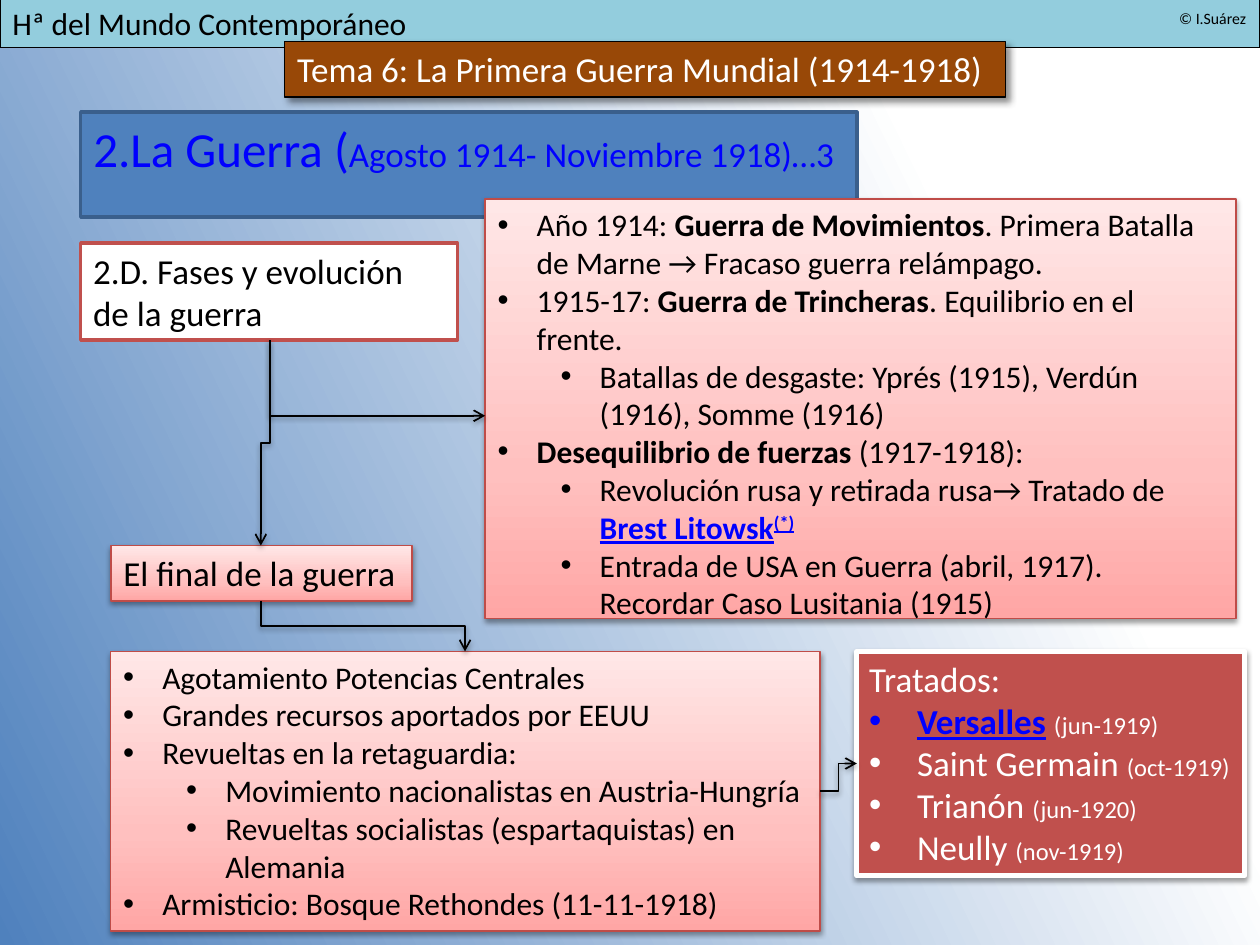
from lxml import etree
from pptx import Presentation
from pptx import util as u
from pptx.dml.color import RGBColor
from pptx.enum import shapes, text
from pptx.oxml import parse_xml
from pptx.oxml.ns import nsdecls, qn

BLACK, WHITE, BLUE, RED = "000000", "FFFFFF", "0000FF", "C0504D"
PINK = [(0, "FFA6A5", 100), (35, "FFC0BF", 100), (100, "FFE7E7", 100)]
SKY = [(0, "4F81BD", 75), (76, WHITE, 100)]
SOFT = (38, 3.1, 1.6, 90)  # opacity, blur, distance, direction
LINK = dict(color=BLUE, bold=True, underline=True)
BOLD = dict(bold=True)
SMALL = dict(size=14)


def rgb(value):
    return RGBColor.from_string(value)


def add_span(para, words, size=18, color=BLACK, bold=False, underline=False, raised=0):
    span = para.add_run()
    span.text = words
    font = span.font
    font.name, font.size, font.bold, font.underline = "Calibri", u.Pt(size), bold, underline
    font.color.rgb = rgb(color)
    if raised:
        font._element.set("baseline", str(raised * 1000))


def set_gradient(fill, stops, angle):
    fill.gradient()
    fill.gradient_angle = 360 - angle
    stop_list = fill._fill._gradFill.find(qn("a:gsLst"))
    for old in list(stop_list):
        stop_list.remove(old)
    for place, color, opacity in stops:
        stop_list.append(parse_xml(
            f'<a:gs {nsdecls("a")} pos="{place * 1000}"><a:srgbClr val="{color}">'
            f'<a:alpha val="{opacity * 1000}"/></a:srgbClr></a:gs>'))


def set_shadow(shape, shadow):
    properties = shape._element.spPr
    for old in properties.findall(qn("a:effectLst")):
        properties.remove(old)
    effects = etree.SubElement(properties, qn("a:effectLst"))
    if shadow:
        opacity, blur, distance, direction = shadow
        effects.append(parse_xml(
            f'<a:outerShdw {nsdecls("a")} blurRad="{u.Pt(blur)}" dist="{u.Pt(distance)}" '
            f'dir="{direction * 60000}" algn="tl" rotWithShape="0"><a:srgbClr val="{BLACK}">'
            f'<a:alpha val="{opacity * 1000}"/></a:srgbClr></a:outerShdw>'))


def set_bullet(para, level, indent):
    para.level = level
    properties = para._p.get_or_add_pPr()
    properties.set("marL", str(u.Inches(indent + level * 0.5)))
    properties.set("indent", str(u.Inches(-indent)))
    etree.SubElement(properties, qn("a:buFont")).set("typeface", "Arial")
    etree.SubElement(properties, qn("a:buChar")).set("char", "•")


class Sheet:
    def __init__(self, deck):
        self.page = deck.slides.add_slide(deck.slide_layouts[1])
        set_gradient(self.page.background.fill, SKY, 334)

    def fill_text(self, shape, lines, wrap=True, indent=0.31, **style):
        """Each line is (level, spans); level None means no bullet."""
        frame = shape.text_frame
        frame.word_wrap = wrap
        frame.auto_size = text.MSO_AUTO_SIZE.SHAPE_TO_FIT_TEXT
        frame.vertical_anchor = text.MSO_ANCHOR.TOP
        for number, (level, spans) in enumerate(lines):
            para = frame.add_paragraph() if number else frame.paragraphs[0]
            para.alignment = text.PP_ALIGN.LEFT
            para.space_before = u.Pt(0)
            if level is not None:
                set_bullet(para, level, indent)
            for words, change in spans:
                add_span(para, words, **{**style, **change})

    def box(self, place, lines, fill=PINK, line="BF4C48", width=0.75, shadow=SOFT,
            holder=None, **style):
        place = [u.Inches(length) for length in place]
        shape = holder or self.page.shapes.add_shape(shapes.MSO_SHAPE.RECTANGLE, *place)
        shape.left, shape.top, shape.width, shape.height = place
        if isinstance(fill, str):
            shape.fill.solid()
            shape.fill.fore_color.rgb = rgb(fill)
        else:
            set_gradient(shape.fill, fill, 270)
        shape.line.color.rgb = rgb(line)
        shape.line.width = u.Pt(width)
        set_shadow(shape, shadow)
        self.fill_text(shape, lines, **style)

    def label(self, place, lines, **style):
        shape = self.page.shapes.add_textbox(*[u.Inches(length) for length in place])
        self.fill_text(shape, lines, **style)

    def arrow(self, start, end, downward=True, corner=False):
        """Bent arrow; a downward one leaves its start vertically."""
        (x1, y1), (x2, y2) = start, end
        ends = [x1, y1, x2, y2]
        if downward:
            middle_x, middle_y = (x1 + x2) / 2, (y1 + y2) / 2
            across, down = abs(y2 - y1) / 2, abs(x2 - x1) / 2
            ends = [middle_x - across, middle_y - down, middle_x + across, middle_y + down]
        link = self.page.shapes.add_connector(
            shapes.MSO_CONNECTOR.ELBOW, *[u.Inches(length) for length in ends])
        properties = link._element.spPr
        if downward:
            frame = properties.find(qn("a:xfrm"))
            frame.set("rot", str((270 if x2 > x1 else 90) * 60000))
            if x2 > x1:
                frame.set("flipH", "1")
        if corner:
            properties.find(qn("a:prstGeom")).set("prst", "bentConnector2")
        link.line.color.rgb = rgb(BLACK)
        link.line.width = u.Pt(1)
        etree.SubElement(link.line._get_or_add_ln(), qn("a:tailEnd")).set("type", "arrow")
        set_shadow(link, SOFT)


def plain(words, level=None):
    return level, [(words, {})]


def main():
    deck = Presentation()
    deck.slide_width, deck.slide_height = u.Inches(10), u.Inches(7.5)
    sheet = Sheet(deck)
    title, body = sheet.page.placeholders

    # Course header
    sheet.box((0, -0.02, 10, 0.4), [plain("Hª del Mundo Contemporáneo")],
              fill="93CDDD", line=BLACK, shadow=None)
    sheet.label((9.26, 0.02, 0.74, 0.25), [plain("© I.Suárez")], wrap=False, size=9)
    sheet.box((2.26, 0.33, 5.72, 0.44),
              [plain("Tema 6: La Primera Guerra Mundial (1914-1918)")],
              fill="984807", line=BLACK, shadow=(43, 4, 3, 45),
              wrap=False, size=20, color=WHITE)

    # Title and section
    sheet.box((0.64, 0.89, 6.16, 0.57),
              [(None, [("2.La Guerra (", dict(size=28)),
                       ("Agosto 1914- Noviembre 1918)…3", {})])],
              fill="4F81BD", line="3A5F8C", width=2, shadow=None, holder=title,
              wrap=False, size=20, color=BLUE)
    sheet.box((0.64, 1.93, 2.99, 0.77), [plain("2.D. Fases y evolución de la guerra")],
              fill=WHITE, line=RED, width=2, shadow=None, size=20)

    # Phases of the war
    sheet.box((3.85, 1.58, 5.96, 3.43), [
        (0, [("Año 1914: ", {}), ("Guerra de Movimientos", BOLD),
             (". Primera Batalla de Marne → Fracaso guerra relámpago.", {})]),
        (0, [("1915-17: ", {}), ("Guerra de Trincheras", BOLD),
             (". Equilibrio en el frente.", {})]),
        plain("Batallas de desgaste: Yprés (1915), Verdún (1916), Somme (1916)", 1),
        (0, [("Desequilibrio de fuerzas ", BOLD), ("(1917-1918):", {})]),
        (1, [("Revolución rusa y retirada rusa→ Tratado de ", {}),
             ("Brest Litowsk", LINK), ("(*)", {**LINK, "raised": 30})]),
        plain("Entrada de USA en Guerra (abril, 1917). Recordar Caso Lusitania (1915)", 1),
    ], holder=body)

    # End of the war
    sheet.box((0.88, 4.33, 2.39, 0.44), [plain("El final de la guerra")],
              wrap=False, size=20)
    sheet.box((0.88, 5.17, 5.63, 2.22), [
        plain("Agotamiento Potencias Centrales", 0),
        plain("Grandes recursos aportados por EEUU", 0),
        plain("Revueltas en la retaguardia:", 0),
        plain("Movimiento nacionalistas en Austria-Hungría", 1),
        plain("Revueltas socialistas (espartaquistas) en Alemania", 1),
        plain("Armisticio: Bosque Rethondes (11-11-1918)", 0),
    ])

    # Treaties
    treaties = [("Saint Germain ", "(oct-1919)"), ("Trianón ", "(jun-1920)"),
                ("Neully ", "(nov-1919)")]
    sheet.box((6.8, 5.17, 3.08, 1.78), [
        plain("Tratados:"),
        (0, [("Versalles", LINK), (" ", {}), ("(jun-1919)", SMALL)]),
        *[(0, [(name, {}), (date, SMALL)]) for name, date in treaties],
    ], fill=RED, line=WHITE, width=3, wrap=False, indent=0.38, size=20, color=WHITE)

    # Arrows
    sheet.arrow((2.14, 2.7), (3.85, 3.3), corner=True)
    sheet.arrow((2.14, 2.7), (2.07, 4.33))
    sheet.arrow((2.07, 4.77), (3.69, 5.17))
    sheet.arrow((6.51, 6.28), (6.8, 6.06), downward=False)

    deck.save("out.pptx")


if __name__ == "__main__":
    main()
